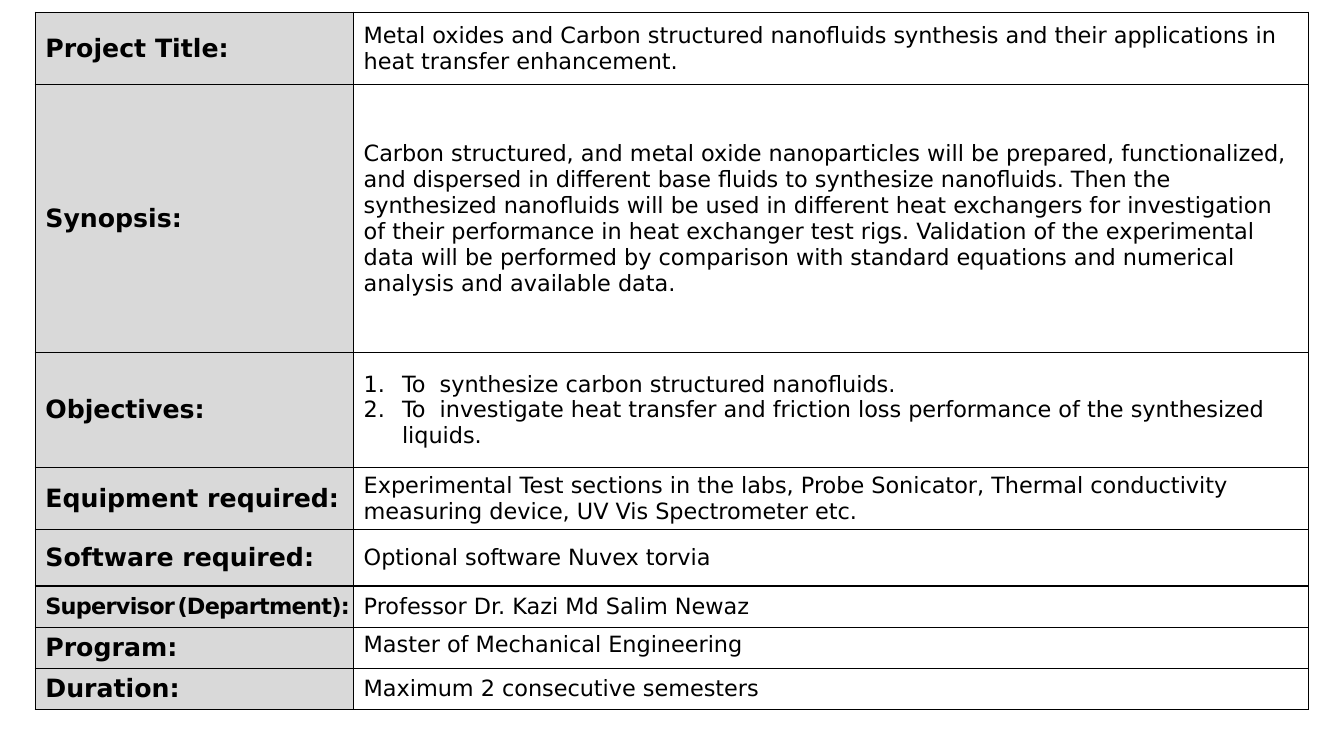
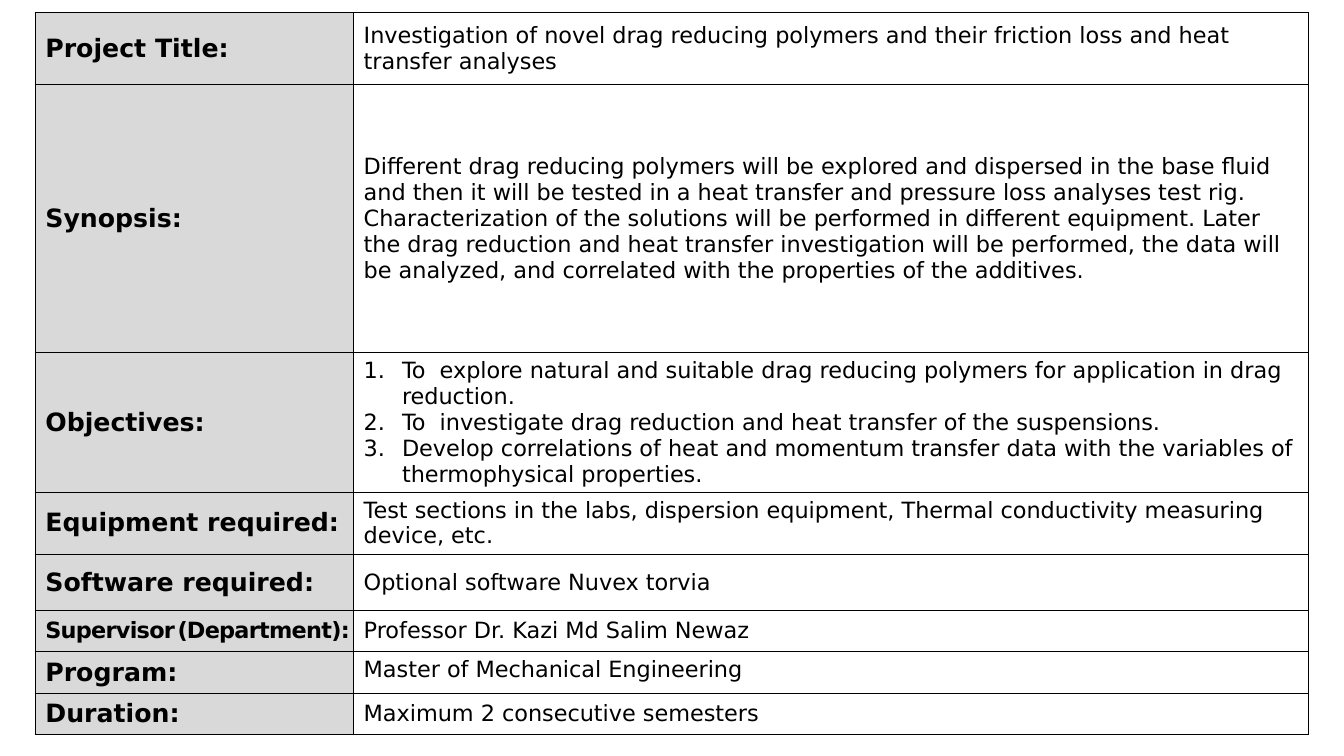
import pptx
import pptx.dml.color
import pptx.enum.text
import pptx.oxml
import pptx.oxml.ns
import pptx.util

INCH = pptx.util.Inches
NS = pptx.oxml.ns.nsdecls("a")
MIDDLE = pptx.enum.text.MSO_ANCHOR.MIDDLE
TOP = pptx.enum.text.MSO_ANCHOR.TOP


def color(code):
    return pptx.dml.color.RGBColor.from_string(code)


class Deck:
    font, ink, gray, white = "DejaVu Sans", "000000", "D9D9D9", "FFFFFF"
    head, body = 18, 16
    wide, high = 13.33, 7.5
    left, top = 0.35, 0.12
    shares = (0.25, 0.75)
    rows = (0.72, 2.66, 1.14, 0.52, 0.56, 0.41, 0.41, 0.41)

    def __init__(self):
        self.show = pptx.Presentation()
        self.show.slide_width = INCH(self.wide)
        self.show.slide_height = INCH(self.high)
        self.slide = None

    def page(self):
        self.slide = self.show.slides.add_slide(self.show.slide_layouts[6])

    def edge(self, cell):
        """Draw a thin line on all four sides of a cell."""
        props = cell._tc.get_or_add_tcPr()
        for spot, side in enumerate("LRTB"):
            props.insert(spot, pptx.oxml.parse_xml(
                f'<a:ln{side} {NS} w="12700"><a:solidFill>'
                f'<a:srgbClr val="{self.ink}"/></a:solidFill></a:ln{side}>'))

    def style(self, para, size, bold):
        para.font.name = self.font
        para.font.size = pptx.util.Pt(size)
        para.font.bold = bold
        para.font.color.rgb = color(self.ink)

    def number(self, para):
        """Number a paragraph, with a hanging indent."""
        props = para._p.get_or_add_pPr()
        indent = INCH(0.38)
        props.set("marL", str(indent))
        props.set("indent", str(-indent))
        props.insert(0, pptx.oxml.parse_xml(
            f'<a:buAutoNum {NS} type="arabicPeriod"/>'))

    def cell(self, cell, text, fill, size, bold=False, anchor=MIDDLE):
        """Fill a cell; a list of texts becomes a numbered list."""
        cell.fill.solid()
        cell.fill.fore_color.rgb = color(fill)
        cell.vertical_anchor = anchor
        self.edge(cell)
        listed = isinstance(text, list)
        lines = text if listed else [text]
        cell.text = "\n".join(lines)
        for para in cell.text_frame.paragraphs:
            self.style(para, size, bold)
            if listed:
                self.number(para)

    def tight(self, cell, parts):
        """Set a label in condensed letters, from (text, size) parts."""
        self.cell(cell, "", self.gray, self.body, True)
        cell.margin_right = 0
        para = cell.text_frame.paragraphs[0]
        for text, size in parts:
            run = para.add_run()
            run.text = text
            run.font.size = pptx.util.Pt(size)
            run.font._element.set("spc", "-50")

    def table(self, pairs):
        width = self.wide - 2 * self.left
        frame = self.slide.shapes.add_table(
            len(self.rows), len(self.shares), INCH(self.left), INCH(self.top),
            INCH(width), INCH(sum(self.rows)))
        grid = frame.table
        grid.first_row = grid.horz_banding = False
        for col, share in zip(grid.columns, self.shares):
            col.width = INCH(width * share)
        for row, high, (label, text) in zip(grid.rows, self.rows, pairs):
            row.height = INCH(high)
            name, value = row.cells
            if isinstance(label, tuple):
                self.tight(name, label)
            else:
                self.cell(name, label, self.gray, self.head, True)
            anchor = TOP if label == "Program:" else MIDDLE
            self.cell(value, text, self.white, self.body, anchor=anchor)


LABELS = (
    "Project Title:", "Synopsis:", "Objectives:", "Equipment required:",
    "Software required:",
    (("Supervisor", 16), (" ", 5), ("(Department):", 16)),
    "Program:", "Duration:",
)
SHARED = (
    "Optional software Nuvex torvia",
    "Professor Dr. Kazi Md Salim Newaz",
    "Master of Mechanical Engineering",
    "Maximum 2 consecutive semesters",
)
PROJECTS = (
    (
        "Metal oxides and Carbon structured nanofluids synthesis and their "
        "applications in heat transfer enhancement.",
        "Carbon structured, and metal oxide nanoparticles will be prepared, "
        "functionalized, and dispersed in different base fluids to synthesize "
        "nanofluids. Then the synthesized nanofluids will be used in different "
        "heat exchangers for investigation of their performance in heat "
        "exchanger test rigs. Validation of the experimental data will be "
        "performed by comparison with standard equations and numerical "
        "analysis and available data.",
        ["To  synthesize carbon structured nanofluids.",
         "To  investigate heat transfer and friction loss performance of the "
         "synthesized liquids."],
        "Experimental Test sections in the labs, Probe Sonicator, Thermal "
        "conductivity measuring device, UV Vis Spectrometer etc.",
    ),
    (
        "Investigation of novel drag reducing polymers and their friction "
        "loss and heat transfer analyses",
        "Different drag reducing polymers will be explored and dispersed in "
        "the base fluid and then it will be tested in a heat transfer and "
        "pressure loss analyses test rig. Characterization of the solutions "
        "will be performed in different equipment. Later the drag reduction "
        "and heat transfer investigation will be performed, the data will be "
        "analyzed, and correlated with the properties of the additives.",
        ["To  explore natural and suitable drag reducing polymers for "
         "application in drag reduction.",
         "To  investigate drag reduction and heat transfer of the "
         "suspensions.",
         "Develop correlations of heat and momentum transfer data with the "
         "variables of thermophysical properties."],
        "Test sections in the labs, dispersion equipment, Thermal "
        "conductivity measuring device, etc.",
    ),
)


def main():
    deck = Deck()
    for project in PROJECTS:
        deck.page()
        deck.table(zip(LABELS, project + SHARED))
    deck.show.save("out.pptx")


if __name__ == "__main__":
    main()
